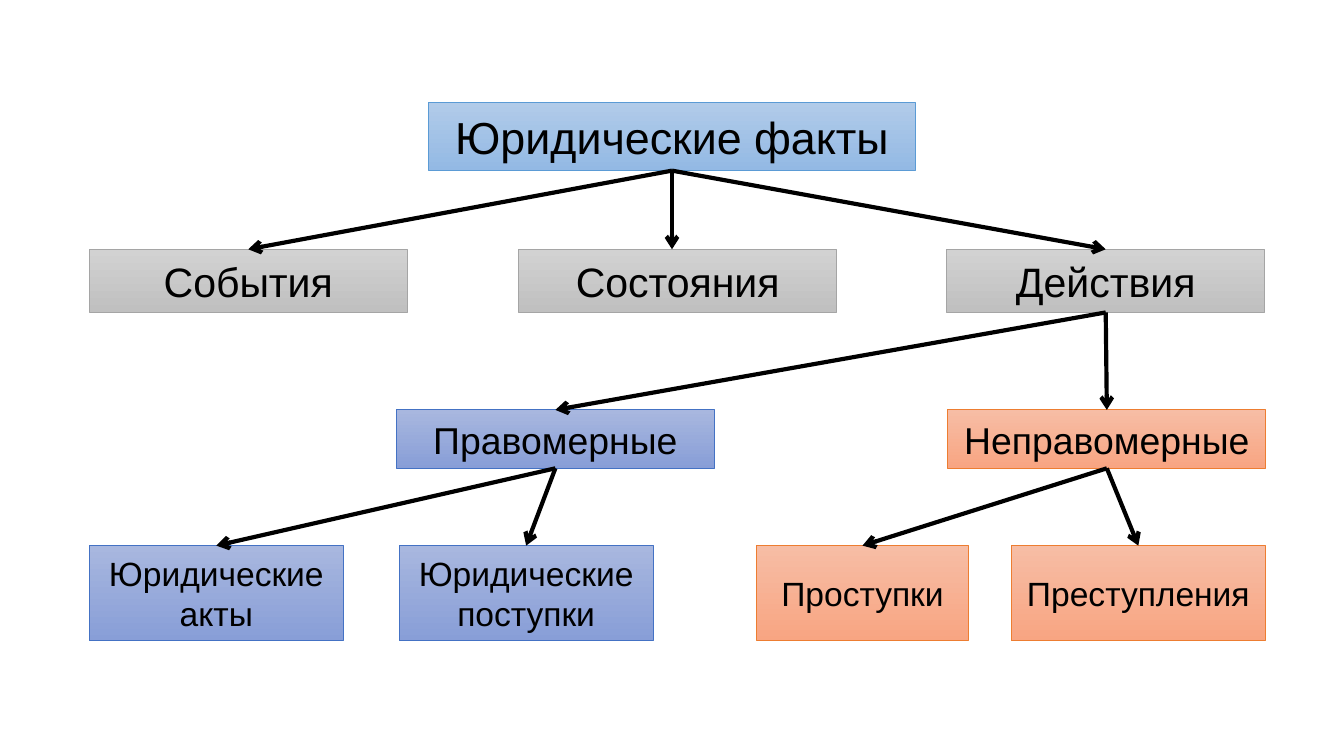
import pptx
import pptx.dml.color
import pptx.enum.shapes
import pptx.enum.text
import pptx.oxml
import pptx.oxml.ns
import pptx.util

RGBColor = pptx.dml.color.RGBColor
BLACK = RGBColor(0x00, 0x00, 0x00)
# Each palette: top, middle and bottom of gradient, then outline
BLUE = (RGBColor(0xB1, 0xCB, 0xE9), RGBColor(0x93, 0xB9, 0xE4), RGBColor(0x5B, 0x9B, 0xD5))
GRAY = (RGBColor(0xD2, 0xD2, 0xD2), RGBColor(0xC0, 0xC0, 0xC0), RGBColor(0xA5, 0xA5, 0xA5))
INDIGO = (RGBColor(0xA8, 0xB7, 0xDF), RGBColor(0x88, 0x9E, 0xD7), RGBColor(0x44, 0x72, 0xC4))
ORANGE = (RGBColor(0xF7, 0xBD, 0xA5), RGBColor(0xF8, 0xA5, 0x82), RGBColor(0xED, 0x7D, 0x31))

SLIDE_WIDTH = pptx.util.Inches(10)
SLIDE_HEIGHT = SLIDE_WIDTH * 9 // 16
UNIT = SLIDE_WIDTH / 100  # square grid, 100 columns across the slide

# Each level: top row, rows high, text size
ROOT_LEVEL = (7.65, 5.05, 24)
KIND_LEVEL = (18.55, 4.7, 22)
LEGALITY_LEVEL = (30.5, 4.35, 20)
LEAF_LEVEL = (40.6, 7.1, 18)

ROOT = "Юридические факты"
# Text, parent, level, left column, columns wide, palette
BRANCHES = [
    ("События", ROOT, KIND_LEVEL, 6.65, 23.65, GRAY),
    ("Состояния", ROOT, KIND_LEVEL, 38.6, 23.65, GRAY),
    ("Действия", ROOT, KIND_LEVEL, 70.45, 23.65, GRAY),
    ("Правомерные", "Действия", LEGALITY_LEVEL, 29.5, 23.65, INDIGO),
    ("Неправомерные", "Действия", LEGALITY_LEVEL, 70.53, 23.65, ORANGE),
    ("Юридические акты", "Правомерные", LEAF_LEVEL, 6.65, 18.9, INDIGO),
    ("Юридические поступки", "Правомерные", LEAF_LEVEL, 29.7, 18.9, INDIGO),
    ("Проступки", "Неправомерные", LEAF_LEVEL, 56.3, 15.75, ORANGE),
    ("Преступления", "Неправомерные", LEAF_LEVEL, 75.25, 18.9, ORANGE),
]


def format_box(shape, text, level, left, width, palette):
    """Place a shape on the grid and give it its gradient, outline and text."""
    top, height, size = level
    shape.left, shape.top, shape.width, shape.height = (
        round(length * UNIT) for length in (left, top, width, height))

    upper, lower, outline = palette
    shape.fill.gradient()
    shape.fill.gradient_angle = 270
    for stop, color, position in zip(shape.fill.gradient_stops, (upper, lower), (0, 1)):
        stop.color.rgb = color
        stop.position = position
    shape.line.color.rgb = outline
    shape.line.width = pptx.util.Pt(0.5)

    frame = shape.text_frame
    frame.text = text
    frame.word_wrap = True
    frame.auto_size = pptx.enum.text.MSO_AUTO_SIZE.NONE
    frame.vertical_anchor = pptx.enum.text.MSO_ANCHOR.MIDDLE
    paragraph = frame.paragraphs[0]
    paragraph.alignment = pptx.enum.text.PP_ALIGN.CENTER
    paragraph.font.name = "Arial"
    paragraph.font.size = pptx.util.Pt(size)
    paragraph.font.color.rgb = BLACK


def add_box(slide, *details):
    shape = slide.shapes.add_shape(pptx.enum.shapes.MSO_SHAPE.RECTANGLE, 0, 0, 0, 0)
    shape.shadow.inherit = False
    format_box(shape, *details)
    return shape


def center_x(shape):
    return shape.left + shape.width // 2


def add_arrow(slide, parent, child):
    """Run from parent to child, straight down if their centers nearly align."""
    start, end = center_x(parent), center_x(child)
    drops_straight = abs(end - start) < UNIT and parent.width > child.width
    if drops_straight:
        end = start
    arrow = slide.shapes.add_connector(
        pptx.enum.shapes.MSO_CONNECTOR.STRAIGHT,
        start, parent.top + parent.height, end, child.top)
    arrow.begin_connect(parent, 2)
    if not drops_straight:
        arrow.end_connect(child, 0)
    arrow.line.color.rgb = BLACK
    arrow.line.width = pptx.util.Pt(2.25)
    namespace = pptx.oxml.ns.nsdecls("a")
    properties = arrow._element.spPr
    line = properties.find(pptx.oxml.ns.qn("a:ln"))
    line.append(pptx.oxml.parse_xml(f'<a:tailEnd {namespace} type="arrow"/>'))
    properties.append(pptx.oxml.parse_xml(f"<a:effectLst {namespace}/>"))


def main():
    presentation = pptx.Presentation()
    presentation.slide_width = SLIDE_WIDTH
    presentation.slide_height = SLIDE_HEIGHT
    title_only = presentation.slide_layouts.get_by_name("Title Only")
    slide = presentation.slides.add_slide(title_only)

    format_box(slide.shapes.title, ROOT, ROOT_LEVEL, 31.9, 36.2, BLUE)
    boxes = {ROOT: slide.shapes.title}
    for text, _, *details in BRANCHES:
        boxes[text] = add_box(slide, text, *details)
    for text, parent, *_ in BRANCHES:
        add_arrow(slide, boxes[parent], boxes[text])

    presentation.save("out.pptx")


if __name__ == "__main__":
    main()
